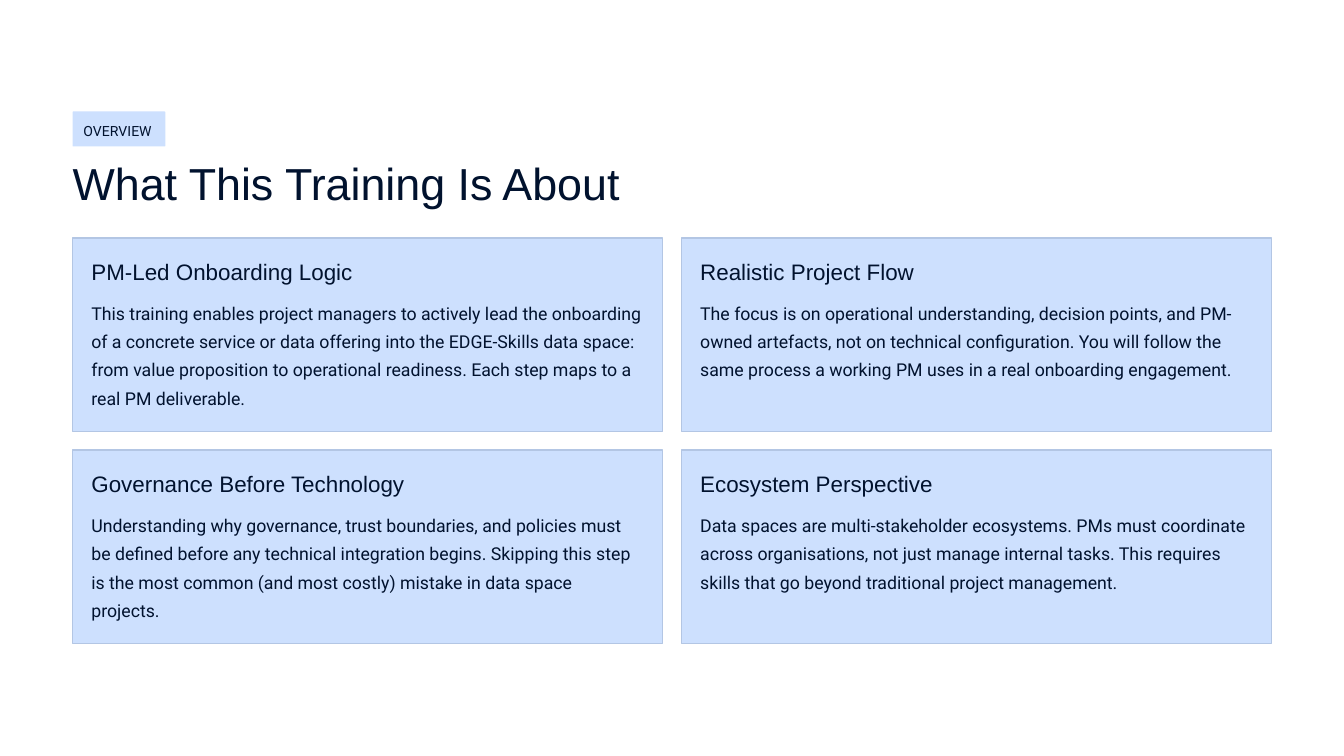
from dataclasses import dataclass

from pptx import Presentation
from pptx.dml.color import RGBColor
from pptx.enum.shapes import MSO_SHAPE
from pptx.enum.text import MSO_ANCHOR, MSO_AUTO_SIZE, PP_ALIGN
from pptx.util import Inches, Pt


@dataclass(frozen=True)
class Theme:
    paper: RGBColor = RGBColor.from_string("FFFFFF")
    panel: RGBColor = RGBColor.from_string("CDE0FE")
    border: RGBColor = RGBColor.from_string("B3C6E4")
    ink: RGBColor = RGBColor.from_string("01122E")
    heading_font: str = "Arial"
    body_font: str = "Roboto"
    badge_size: float = 7.5
    title_size: float = 24
    heading_size: float = 12
    body_size: float = 9.5
    heading_spacing: float = 1.04
    body_spacing: float = 1.33


THEME = Theme()

CARDS = [
    ("PM-Led Onboarding Logic",
     "This training enables project managers to actively lead the onboarding of a concrete "
     "service or data offering into the EDGE-Skills data space: from value proposition to "
     "operational readiness. Each step maps to a real PM deliverable."),
    ("Realistic Project Flow",
     "The focus is on operational understanding, decision points, and PM-owned artefacts, "
     "not on technical configuration. You will follow the same process a working PM uses "
     "in a real onboarding engagement."),
    ("Governance Before Technology",
     "Understanding why governance, trust boundaries, and policies must be defined before "
     "any technical integration begins. Skipping this step is the most common (and most "
     "costly) mistake in data space projects."),
    ("Ecosystem Perspective",
     "Data spaces are multi-stakeholder ecosystems. PMs must coordinate across "
     "organisations, not just manage internal tasks. This requires skills that go beyond "
     "traditional project management."),
]


def write(box, text, font, size, spacing, wrap=True):
    frame = box.text_frame
    frame.margin_left = frame.margin_right = frame.margin_top = frame.margin_bottom = 0
    frame.auto_size = MSO_AUTO_SIZE.NONE
    frame.vertical_anchor = MSO_ANCHOR.TOP
    frame.word_wrap = wrap
    frame.text = text
    para = frame.paragraphs[0]
    para.alignment = PP_ALIGN.LEFT
    para.line_spacing = spacing
    para.space_before = Pt(0)
    span = para.runs[0]
    span.font.name = font
    span.font.size = Pt(size)
    span.font.color.rgb = THEME.ink


def add_text(page, left, top, width, height, *style, wrap=True):
    box = page.shapes.add_textbox(Inches(left), Inches(top), Inches(width), Inches(height))
    write(box, *style, wrap=wrap)


def add_panel(page, left, top, width, height, rounding, border=None):
    panel = page.shapes.add_shape(
        MSO_SHAPE.ROUNDED_RECTANGLE, Inches(left), Inches(top), Inches(width), Inches(height))
    panel.adjustments[0] = rounding
    panel.shadow.inherit = False
    panel.fill.solid()
    panel.fill.fore_color.rgb = THEME.panel
    if border is None:
        panel.line.fill.background()
    else:
        panel.line.color.rgb = border
        panel.line.width = Pt(0.75)


def add_header(page, left, top, width):
    add_panel(page, left, top, 0.69, 0.26, 0.02)
    add_text(page, left + 0.08, top + 0.04, 1.03, 0.17, "OVERVIEW",
             THEME.body_font, THEME.badge_size, THEME.body_spacing, wrap=False)
    title = page.shapes.title
    title.left, title.top = Inches(left), Inches(top + 0.31)
    title.width, title.height = Inches(width), Inches(0.42)
    write(title, "What This Training Is About",
          THEME.heading_font, THEME.title_size, THEME.heading_spacing)


def add_card(page, left, top, width, height, heading, body):
    padding = 0.14
    inner = width - 2 * padding
    add_panel(page, left, top, width, height, 0, THEME.border)
    add_text(page, left + padding, top + padding, inner, 0.21, heading,
             THEME.heading_font, THEME.heading_size, THEME.heading_spacing)
    add_text(page, left + padding, top + 0.43, inner, 0.87, body,
             THEME.body_font, THEME.body_size, THEME.body_spacing)


def add_card_grid(page, left, top, width, height, gap=0.14, columns=2):
    rows = len(CARDS) // columns
    card_width = (width - gap * (columns - 1)) / columns
    card_height = (height - gap * (rows - 1)) / rows
    for index, (heading, body) in enumerate(CARDS):
        row, column = divmod(index, columns)
        add_card(page, left + column * (card_width + gap), top + row * (card_height + gap),
                 card_width, card_height, heading, body)


def main():
    deck = Presentation()
    deck.slide_width = Inches(10)
    deck.slide_height = deck.slide_width * 9 // 16
    page = deck.slides.add_slide(deck.slide_layouts[5])
    page.background.fill.solid()
    page.background.fill.fore_color.rgb = THEME.paper
    add_header(page, 0.54, 0.83, 4.85)
    add_card_grid(page, 0.54, 1.77, 8.92, 3.02)
    deck.save("out.pptx")


if __name__ == "__main__":
    main()
